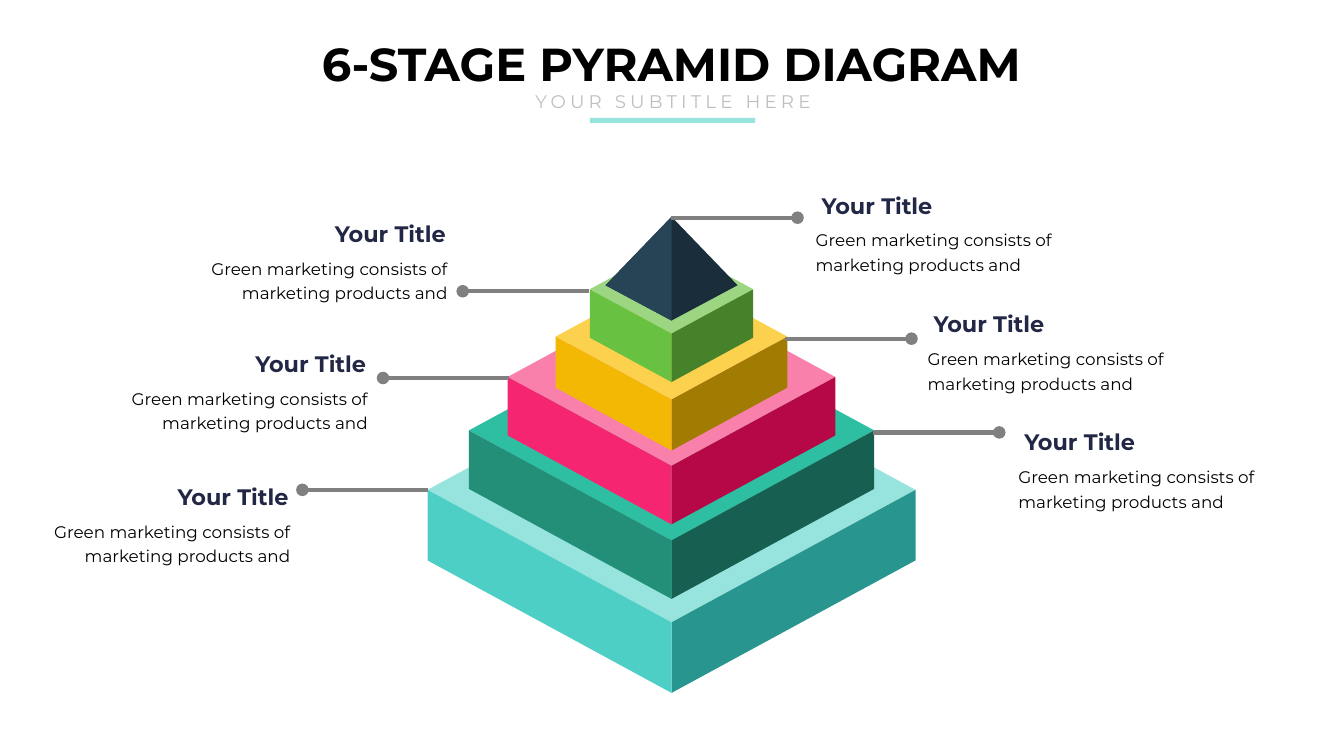
from dataclasses import dataclass

from lxml.etree import SubElement
from pptx import Presentation
from pptx.dml.color import RGBColor
from pptx.enum.shapes import MSO_CONNECTOR, MSO_SHAPE
from pptx.enum.text import MSO_ANCHOR, MSO_AUTO_SIZE, PP_ALIGN
from pptx.oxml.ns import qn
from pptx.util import Inches, Pt

FONT = "Montserrat"
HEADING = "Your Title"
BODY = "Green marketing consists of marketing products and"
SLOPE = 0.543
LEADER_LENGTH = 9.38
CALLOUT_SIZE = (20.03, 12.4)

# half width, height of the widest edge, depth, top, left and right colours
TIERS = [
    (50, 57.42, 14.83, "97E3DE", "4DCFC6", "28958E"),
    (41.53, 44.92, 12.29, "2EBFA2", "238F79", "176051"),
    (33.57, 33.69, 12.29, "FA80AC", "F62571", "B60746"),
    (23.76, 25.21, 10.7, "FCD14E", "F3B804", "A27B03"),
    (16.74, 15.25, 10.17, "9CD682", "69C141", "45822A"),
]
CALLOUTS = [
    ("right", 59.79, 24.67, 49.96, 28.8),
    ("right", 68.12, 40.4, 58.44, 44.8),
    ("right", 74.87, 56, 64.97, 57.2),
    ("left", 2.48, 63.2, 31.88, 64.8),
    ("left", 8.25, 45.6, 37.88, 50),
    ("left", 14.18, 28.4, 43.81, 38.53),
]


@dataclass
class Box:
    left: int
    top: int
    width: int
    height: int

    def point(self, x, y):
        return (round(self.left + self.width * x / 100),
                round(self.top + self.height * y / 100))

    def region(self, x, y, width, height):
        return Box(*self.point(x, y), round(self.width * width / 100),
                   round(self.height * height / 100))

    def frame(self):
        return self.left, self.top, self.width, self.height


def color(value):
    return RGBColor.from_string(value)


def paint(shape, fill):
    shape.shadow.inherit = False
    shape.fill.solid()
    shape.fill.fore_color.rgb = color(fill)
    shape.line.fill.background()


def add_text(slide, box, text, size, fill, bold=False, align=PP_ALIGN.LEFT,
             anchor=MSO_ANCHOR.TOP, wrap=False, insets=(0.1, 0.05),
             line_spacing=None, tracking=None):
    shape = slide.shapes.add_textbox(*box.frame())
    frame = shape.text_frame
    frame.word_wrap = wrap
    frame.auto_size = MSO_AUTO_SIZE.SHAPE_TO_FIT_TEXT
    frame.vertical_anchor = anchor
    frame.margin_left = frame.margin_right = Inches(insets[0])
    frame.margin_top = frame.margin_bottom = Inches(insets[1])
    paragraph = frame.paragraphs[0]
    paragraph.alignment = align
    if line_spacing:
        paragraph.line_spacing = Pt(line_spacing)
    run = paragraph.add_run()
    run.text = text
    run.font.name = FONT
    run.font.size = Pt(size)
    run.font.bold = bold
    run.font.color.rgb = color(fill)
    if tracking:
        run._r.get_or_add_rPr().set("spc", str(tracking * 100))


def add_polygon(slide, points, fill):
    builder = slide.shapes.build_freeform(*points[0], scale=1.0)
    builder.add_line_segments(points[1:], close=True)
    paint(builder.convert_to_shape(), fill)


def add_header(slide, box):
    add_text(slide, box.region(22.81, 4, 54.31, 8.8), "6-STAGE PYRAMID DIAGRAM",
             33, "000000", bold=True, align=PP_ALIGN.CENTER)
    bar = slide.shapes.add_shape(
        MSO_SHAPE.RECTANGLE, *box.region(43.89, 15.6, 12.3, 0.67).frame())
    paint(bar, "97E3DE")
    add_text(slide, box.region(38.71, 11.33, 22.73, 4.27), "YOUR SUBTITLE HERE",
             13, "BFBFBF", align=PP_ALIGN.CENTER, tracking=3)


def add_tier(slide, box, half, edge, depth, top_fill, left_fill, right_fill):
    rise = half * SLOPE * box.width / box.height
    front = box.point(50, edge + rise)
    foot = box.point(50, edge + rise + depth)
    left, right = [box.point(50 + side * half, edge) for side in (-1, 1)]
    add_polygon(slide, [box.point(50, edge - rise), right, front, left],
                top_fill)
    for side, corner, fill in ((1, right, right_fill), (-1, left, left_fill)):
        base = box.point(50 + side * half, edge + depth)
        add_polygon(slide, [foot, base, corner, front], fill)


def add_pyramid(slide, box):
    for tier in TIERS:
        add_tier(slide, box, *tier)
    peak, front = box.point(50, 0), box.point(50, 21.82)
    left, right = [box.point(50 + side * 13.53, 14.41) for side in (-1, 1)]
    add_polygon(slide, [peak, right, front, left], "192D3A")
    add_polygon(slide, [peak, front, left], "264456")


def add_leader(slide, start, end):
    connector = slide.shapes.add_connector(
        MSO_CONNECTOR.STRAIGHT, *start, *end)
    connector.line.width = Pt(3)
    connector.line.color.rgb = color("808080")
    properties = connector._element.spPr
    SubElement(properties.find(qn("a:ln")), qn("a:tailEnd"), type="oval")
    SubElement(properties, qn("a:effectLst"))


def add_callout(slide, box, side):
    on_right = side == "right"
    align = PP_ALIGN.LEFT if on_right else PP_ALIGN.RIGHT
    add_text(slide, box.region(0, 35.5, 100, 64.5), BODY, 12, "000000",
             align=align, wrap=True, insets=(0.12, 0.06), line_spacing=17.5)
    add_text(slide, box.region(3 if on_right else 48.7, 0, 49.8, 39.8), HEADING,
             16, "212745", bold=True, align=align, anchor=MSO_ANCHOR.MIDDLE)


def main():
    presentation = Presentation()
    presentation.slide_width = Inches(13.33)
    presentation.slide_height = Inches(7.5)
    slide = presentation.slides.add_slide(presentation.slide_layouts[6])
    page = Box(0, 0, presentation.slide_width, presentation.slide_height)
    add_header(slide, page)
    add_pyramid(slide, page.region(31.81, 28.67, 36.31, 62.93))
    for side, left, top, x, y in CALLOUTS:
        reach = LEADER_LENGTH if side == "right" else -LEADER_LENGTH
        add_leader(slide, page.point(x, y), page.point(x + reach, y))
        add_callout(slide, page.region(left, top, *CALLOUT_SIZE), side)
    presentation.save("out.pptx")


if __name__ == "__main__":
    main()
